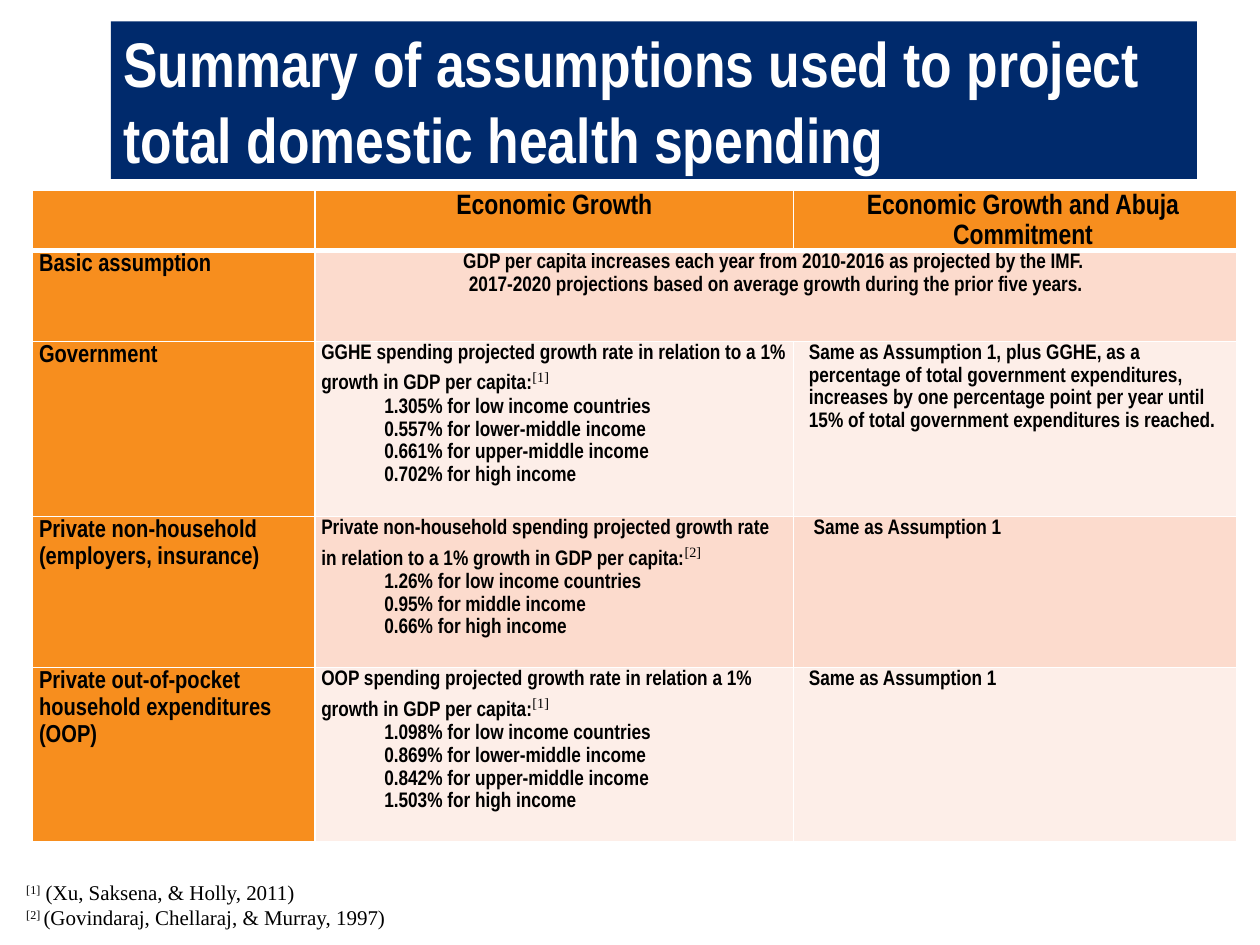
"""Builds the slide on assumptions behind projected domestic health spending."""
from lxml.etree import SubElement
from pptx import Presentation
from pptx.dml.color import RGBColor as RGB
from pptx.enum.text import MSO_ANCHOR as Anchor, PP_ALIGN as Align
from pptx.oxml.ns import qn
from pptx.util import Inches, Pt

HUES = {"navy": "002A6C", "orange": "F78E1E", "rose": "FCDBCD",
        "blush": "FDEEE8", "white": "FFFFFF", "black": "000000"}
NARROW, SERIF = "Arial Narrow", "Times New Roman"


def add_run(para, text, size, face=NARROW, hue="black", bold=True, raised=False):
    run = para.add_run()
    run.text = text
    font = run.font
    font.size, font.name, font.bold = Pt(size), face, bold
    font.color.rgb = RGB.from_string(HUES[hue])
    if raised:
        font._element.set("baseline", "30000")


def style_cell(cell, hue, left, right, base):
    cell.fill.solid()
    cell.fill.fore_color.rgb = RGB.from_string(HUES[hue])
    cell.margin_left, cell.margin_right = Inches(left), Inches(right)
    cell.margin_top = cell.margin_bottom = 0
    props = cell._tc.get_or_add_tcPr()
    for spot, side in enumerate("LRTB"):
        width = Pt(base if side == "B" else 1)
        line = SubElement(props, qn(f"a:ln{side}"), w=str(width))
        fill = SubElement(line, qn("a:solidFill"))
        SubElement(fill, qn("a:srgbClr"), val=HUES["white"])
        props.insert(spot, line)


deck = Presentation()
deck.slide_width, deck.slide_height = Inches(10), Inches(7.5)
slide = deck.slides.add_slide(deck.slide_layouts[5])

title = slide.shapes.title
title.left, title.top = Inches(0.88), Inches(0.17)
title.width, title.height = Inches(8.62), Inches(1.25)
title.fill.solid()
title.fill.fore_color.rgb = RGB.from_string(HUES["navy"])
title.text_frame.vertical_anchor = Anchor.MIDDLE
para = title.text_frame.paragraphs[0]
para.alignment = Align.LEFT
add_run(para, "Summary of assumptions used to project total domestic health spending",
        36, hue="white")

rows = [
    ("", ["Economic Growth"], "", [], "Economic Growth and Abuja Commitment"),
    ("Basic assumption",
     ["GDP per capita increases each year from 2010-2016 as projected by the IMF. ",
      "2017-2020 projections based on average growth during the prior five years."],
     "", [], ""),
    ("Government",
     ["GGHE spending projected growth rate in relation to a 1% growth in GDP per capita:"],
     "[1]",
     ["1.305% for low income countries", "0.557% for lower-middle income",
      "0.661% for upper-middle income", "0.702% for high income"],
     "Same as Assumption 1, plus GGHE, as a percentage of total government "
     "expenditures, increases by one percentage point per year until 15% of total "
     "government expenditures is reached."),
    ("Private non-household (employers, insurance)",
     ["Private non-household spending projected growth rate in relation to a 1% "
      "growth in GDP per capita:"],
     "[2]",
     ["1.26% for low income countries", "0.95% for middle income",
      "0.66% for high income"],
     " Same as Assumption 1"),
    ("Private out-of-pocket household expenditures (OOP)",
     ["OOP spending projected growth rate in relation a 1% growth in GDP per capita:"],
     "[1]",
     ["1.098% for low income countries", "0.869% for lower-middle income",
      "0.842% for upper-middle income", "1.503% for high income"],
     "Same as Assumption 1"),
]
widths = [2.24, 3.8, 3.52]
heights = [0.15, 0.72, 1.39, 1.2, 1.38]
table = slide.shapes.add_table(len(rows), len(widths), Inches(0.26), Inches(1.51),
                               Inches(sum(widths)), Inches(sum(heights))).table
for col, width in zip(table.columns, widths):
    col.width = Inches(width)
for row, height in zip(table.rows, heights):
    row.height = Inches(height)
table.cell(1, 1).merge(table.cell(1, 2))

for r, (label, leads, mark, rates, plan) in enumerate(rows):
    head = r == 0
    size = 16 if head else 12
    tint = "orange" if head else ("rose" if r % 2 else "blush")
    cells = [table.cell(r, c) for c in range(3)]
    for c, cell in enumerate(cells):
        left = 0 if c == 2 else 0.05
        right = 0 if c == 2 and head else 0.05
        style_cell(cell, tint if c else "orange", left, right, 3 if head else 1)
    lines = [(0, label, 14, 0)]
    lines += [(1, lead, size, 0) for lead in leads]
    lines += [(1, rate, size, 1) for rate in rates]
    lines += [(2, plan, size, 0)]
    for c, text, points, level in lines:
        if not text:
            continue
        frame = cells[c].text_frame
        para = frame.add_paragraph() if frame.text else frame.paragraphs[0]
        para.line_spacing = 1.15
        para.level = level
        if c and r < 2:
            para.alignment = Align.CENTER
        indent = 0.5 if level else 0.12 if c == 2 else 0
        props = para._p.get_or_add_pPr()
        props.set("marL", str(Inches(indent)))
        props.set("indent", "0")
        add_run(para, text, points)
        if mark and text in leads:
            add_run(para, mark, 14, SERIF, bold=False, raised=True)

notes = slide.shapes.add_textbox(Inches(0.11), Inches(6.93), Inches(9.89), Inches(0.5))
frame = notes.text_frame
frame.word_wrap = True
cites = [("[1]", " (Xu, Saksena, & Holly, 2011)"),
         ("[2] ", "(Govindaraj, Chellaraj, & Murray, 1997)")]
for n, (mark, cite) in enumerate(cites):
    para = frame.add_paragraph() if n else frame.paragraphs[0]
    add_run(para, mark, 12, SERIF, bold=False, raised=True)
    add_run(para, cite, 12, SERIF, bold=False)

deck.save("out.pptx")
